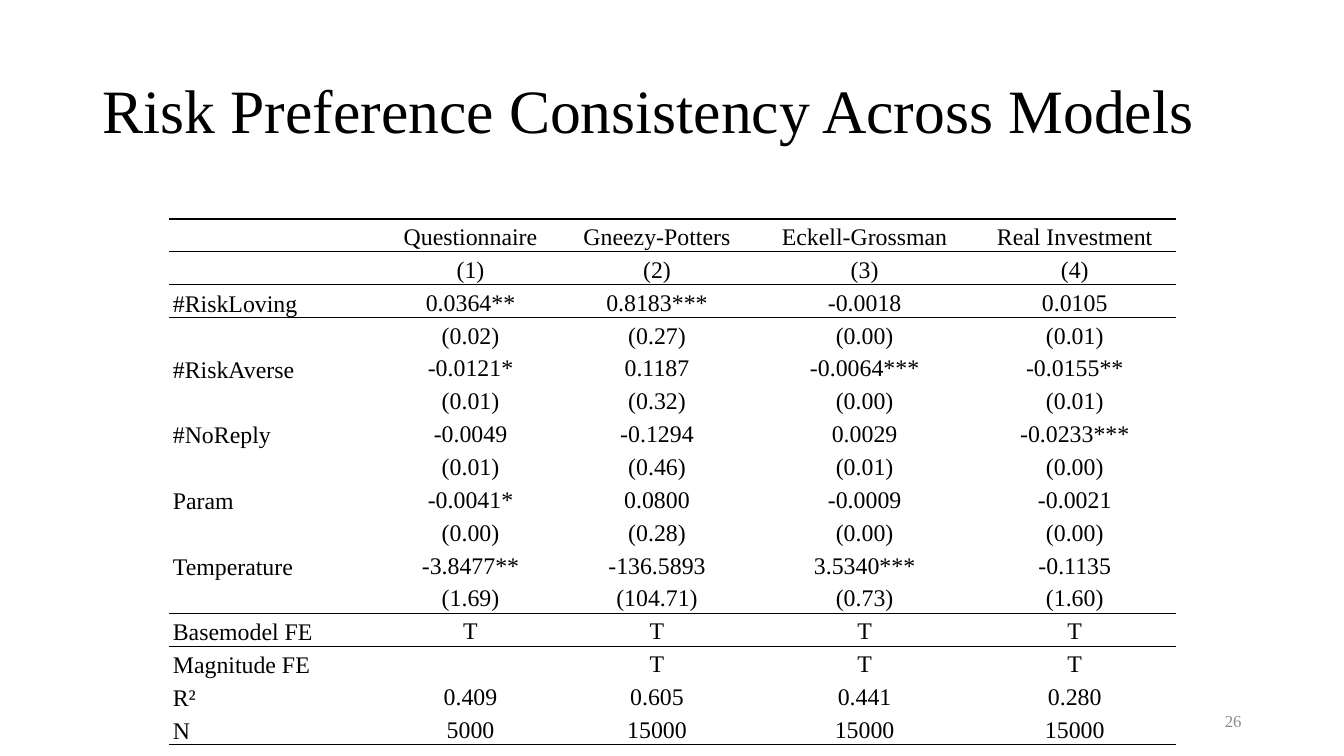
"""Build a slide with a regression table of risk preference across models."""
from dataclasses import dataclass

import lxml.etree
import pptx
import pptx.dml.color
import pptx.enum.text
import pptx.oxml.ns
import pptx.util

Pt = pptx.util.Pt
RGBColor = pptx.dml.color.RGBColor
Align = pptx.enum.text.PP_ALIGN
Anchor = pptx.enum.text.MSO_ANCHOR
qn = pptx.oxml.ns.qn

BLACK = RGBColor(0x00, 0x00, 0x00)
WHITE = RGBColor(0xFF, 0xFF, 0xFF)
GRAY = RGBColor(0x8C, 0x8C, 0x8C)
FONT = "Times New Roman"
SIZE = 17
PLAIN = "{2D5ABB26-0587-4C30-8999-92F81FD0307C}"


@dataclass
class Row:
    label: str
    values: tuple[str, ...]
    height: float = 21.8
    rule: float = 0


ROWS = [
    Row("", ("", "", "", ""), 23.2, 2.25),
    Row("", ("Questionnaire", "Gneezy-Potters", "Eckell-Grossman", "Real Investment"), 22.6, 1),
    Row("", ("(1)", "(2)", "(3)", "(4)"), 23.4, 1),
    Row("#RiskLoving", ("0.0364**", "0.8183***", "-0.0018", "0.0105")),
    Row("", ("(0.02)", "(0.27)", "(0.00)", "(0.01)")),
    Row("#RiskAverse", ("-0.0121*", "0.1187", "-0.0064***", "-0.0155**")),
    Row("", ("(0.01)", "(0.32)", "(0.00)", "(0.01)")),
    Row("#NoReply", ("-0.0049", "-0.1294", "0.0029", "-0.0233***")),
    Row("", ("(0.01)", "(0.46)", "(0.01)", "(0.00)")),
    Row("Param", ("-0.0041*", "0.0800", "-0.0009", "-0.0021")),
    Row("", ("(0.00)", "(0.28)", "(0.00)", "(0.00)")),
    Row("Temperature", ("-3.8477**", "-136.5893", "3.5340***", "-0.1135")),
    Row("", ("(1.69)", "(104.71)", "(0.73)", "(1.60)"), rule=1),
    Row("Basemodel FE", ("T", "T", "T", "T")),
    Row("Magnitude FE", ("", "T", "T", "T")),
    Row("R²", ("0.409", "0.605", "0.441", "0.280")),
    Row("N", ("5000", "15000", "15000", "15000"), rule=1),
]
WIDTHS = (152.6, 126, 140.4, 156.2, 144)


def style(frame, size: float, color: RGBColor, align: Align, gap: float) -> None:
    part = frame.paragraphs[0]
    part.alignment = align
    part.line_spacing = gap
    for run in part.runs:
        run.font.name = FONT
        run.font.size = Pt(size)
        run.font.color.rgb = color


def border(cell, side: str, width: float) -> None:
    props = cell._tc.get_or_add_tcPr()
    line = lxml.etree.SubElement(props, qn(f"a:{side}"), w=str(Pt(width)))
    fill = lxml.etree.SubElement(line, qn("a:solidFill"))
    lxml.etree.SubElement(fill, qn("a:srgbClr"), val=str(BLACK))


def fill_cell(cell, text: str, first: bool, above: float, below: float) -> None:
    cell.text_frame.text = text
    style(cell.text_frame, SIZE, BLACK, Align.LEFT if first else Align.CENTER, 1.15)
    if not text:
        part = cell.text_frame.paragraphs[0]._p
        lxml.etree.SubElement(part, qn("a:endParaRPr"), sz=str(SIZE * 100))
    cell.vertical_anchor = Anchor.BOTTOM if first else Anchor.MIDDLE
    cell.margin_left = cell.margin_right = Pt(3)
    cell.margin_top = cell.margin_bottom = 0
    for side, width in (("lnT", above), ("lnB", below)):
        if width:
            border(cell, side, width)
    cell.fill.solid()
    cell.fill.fore_color.rgb = WHITE


def add_grid(slide) -> None:
    high = sum(row.height for row in ROWS)
    table = slide.shapes.add_table(
        len(ROWS), len(WIDTHS), Pt(120.5), Pt(133.2), Pt(sum(WIDTHS)), Pt(high)
    ).table
    table.first_row = table.horz_banding = False
    table._tbl.tblPr.find(qn("a:tableStyleId")).text = PLAIN
    for column, width in zip(table.columns, WIDTHS):
        column.width = Pt(width)
    above = 0
    for r, row in enumerate(ROWS):
        table.rows[r].height = Pt(row.height)
        for c, text in enumerate((row.label, *row.values)):
            fill_cell(table.cell(r, c), text, c == 0, above, row.rule)
        above = row.rule


def add_title(slide) -> None:
    title = slide.shapes.title
    title.left, title.top, title.width, title.height = Pt(66), Pt(28.8), Pt(828), Pt(104.4)
    frame = title.text_frame
    frame.text = "Risk Preference Consistency Across Models"
    frame.auto_size = pptx.enum.text.MSO_AUTO_SIZE.NONE
    frame.vertical_anchor = Anchor.MIDDLE
    style(frame, 44, BLACK, Align.LEFT, 0.9)


def add_number(slide) -> None:
    frame = slide.shapes.add_textbox(Pt(678), Pt(500.4), Pt(216), Pt(28.8)).text_frame
    frame.text = "26"
    frame.word_wrap = True
    frame.vertical_anchor = Anchor.MIDDLE
    style(frame, 12, GRAY, Align.RIGHT, 1.0)


def main() -> None:
    deck = pptx.Presentation()
    deck.slide_width, deck.slide_height = Pt(960), Pt(540)
    slide = deck.slides.add_slide(deck.slide_layouts[5])
    add_title(slide)
    add_number(slide)
    add_grid(slide)
    deck.save("out.pptx")


if __name__ == "__main__":
    main()
